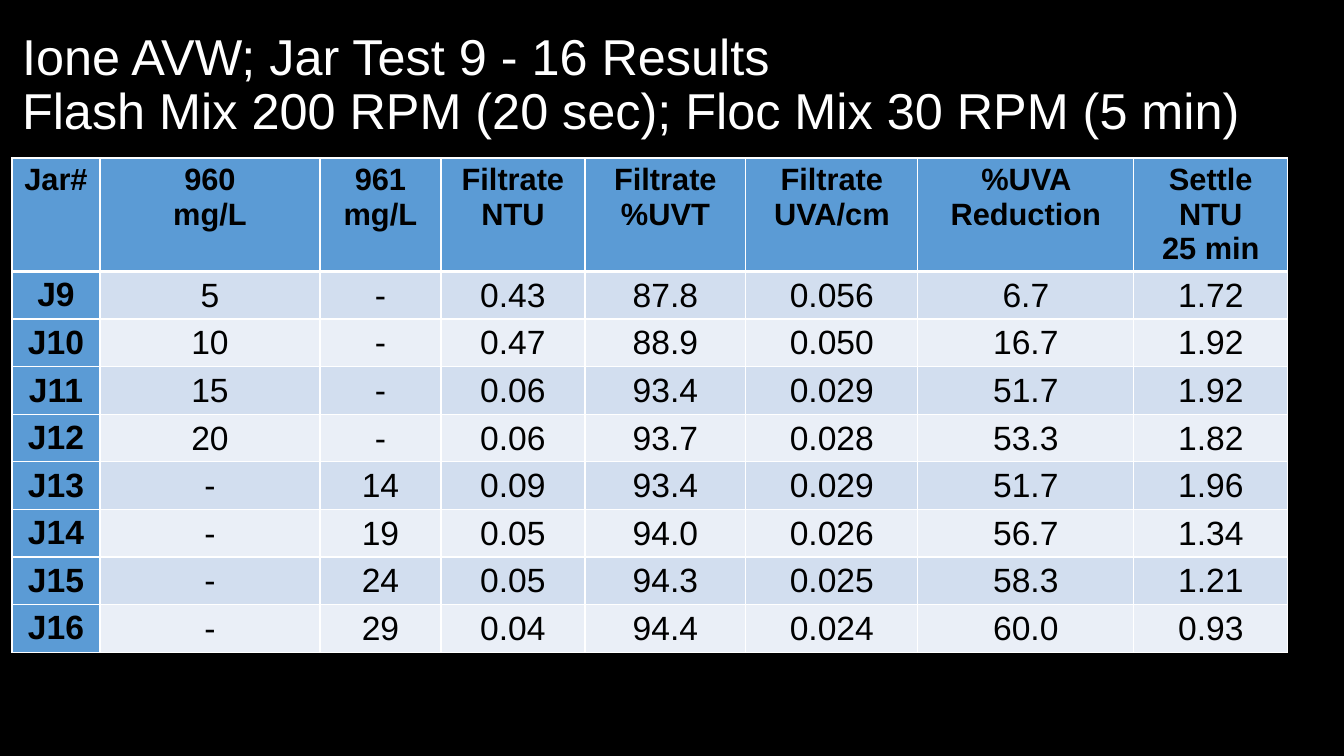
from lxml import etree
from pptx import Presentation, util as u
from pptx.dml.color import RGBColor
from pptx.enum import text as t
from pptx.oxml.ns import qn

PX = 914400 / 100.8


def px(n):
    return u.Emu(round(n * PX))


def style(para, size, color, bold=False):
    """Set Arial, size, colour and weight on every run."""
    for run in para.runs:
        font = run.font
        font.name, font.size, font.bold = "Arial", u.Pt(size), bold
        font.color.rgb = RGBColor.from_string(color)


HEAD = ["Jar#", "960\nmg/L", "961\nmg/L", "Filtrate\nNTU", "Filtrate\n%UVT",
        "Filtrate\nUVA/cm", "%UVA Reduction", "Settle\nNTU\n25 min"]
DATA = [
    ["J9", "5", "-", "0.43", "87.8", "0.056", "6.7", "1.72"],
    ["J10", "10", "-", "0.47", "88.9", "0.050", "16.7", "1.92"],
    ["J11", "15", "-", "0.06", "93.4", "0.029", "51.7", "1.92"],
    ["J12", "20", "-", "0.06", "93.7", "0.028", "53.3", "1.82"],
    ["J13", "-", "14", "0.09", "93.4", "0.029", "51.7", "1.96"],
    ["J14", "-", "19", "0.05", "94.0", "0.026", "56.7", "1.34"],
    ["J15", "-", "24", "0.05", "94.3", "0.025", "58.3", "1.21"],
    ["J16", "-", "29", "0.04", "94.4", "0.024", "60.0", "0.93"],
]
WIDTHS = [88, 220, 121, 144, 161, 172, 216, 154]
HEAD_H, ROW_H = 113, 47
BLUE, BANDS = "5B9BD5", ["EAEFF7", "D2DEEF"]

prs = Presentation()
prs.slide_width, prs.slide_height = px(1344), px(756)
slide = prs.slides.add_slide(prs.slide_layouts[5])
back = slide.background.fill
back.solid()
back.fore_color.rgb = RGBColor.from_string("000000")

title = slide.shapes.title
title.left, title.top, title.width, title.height = px(12), px(13), px(1313), px(146)
frame = title.text_frame
frame.text = ("Ione AVW; Jar Test 9 - 16 Results\v"
              "Flash Mix 200 RPM (20 sec); Floc Mix 30 RPM (5 min)")
frame.word_wrap = True
frame.auto_size = t.MSO_AUTO_SIZE.NONE
frame.vertical_anchor = t.MSO_ANCHOR.MIDDLE
para = frame.paragraphs[0]
para.alignment, para.line_spacing = t.PP_ALIGN.LEFT, 0.9
style(para, 36, "FFFFFF")

rows = [HEAD] + DATA
table = slide.shapes.add_table(len(rows), len(HEAD), px(12), px(158), px(sum(WIDTHS)),
                               px(HEAD_H + ROW_H * len(DATA))).table
table.first_col = True
for col, width in zip(table.columns, WIDTHS):
    col.width = px(width)

for r, row in enumerate(rows):
    table.rows[r].height = px(ROW_H if r else HEAD_H)
    for c, value in enumerate(row):
        cell = table.cell(r, c)
        label = r == 0 or c == 0
        cell.text_frame.text = value
        for para in cell.text_frame.paragraphs:
            para.alignment = t.PP_ALIGN.CENTER
            style(para, 24 if r else 22, "000000", label)
        if not label:
            cell.vertical_anchor = t.MSO_ANCHOR.MIDDLE
            cell.margin_left = cell.margin_right = cell.margin_top = px(1)
            cell.margin_bottom = 0
        cell.fill.solid()
        cell.fill.fore_color.rgb = RGBColor.from_string(BLUE if label else BANDS[r % 2])

        # Border lines come before the fill in the cell properties.
        props = cell._tc.get_or_add_tcPr()
        for i, side in enumerate(["lnL", "lnR", "lnT", "lnB"]):
            thick = (r, side) in [(0, "lnB"), (1, "lnT")]
            line = etree.Element(qn("a:" + side), w=str(u.Pt(3 if thick else 1)))
            fill = etree.SubElement(line, qn("a:solidFill"))
            etree.SubElement(fill, qn("a:srgbClr"), val="FFFFFF")
            props.insert(i, line)

prs.save("out.pptx")
